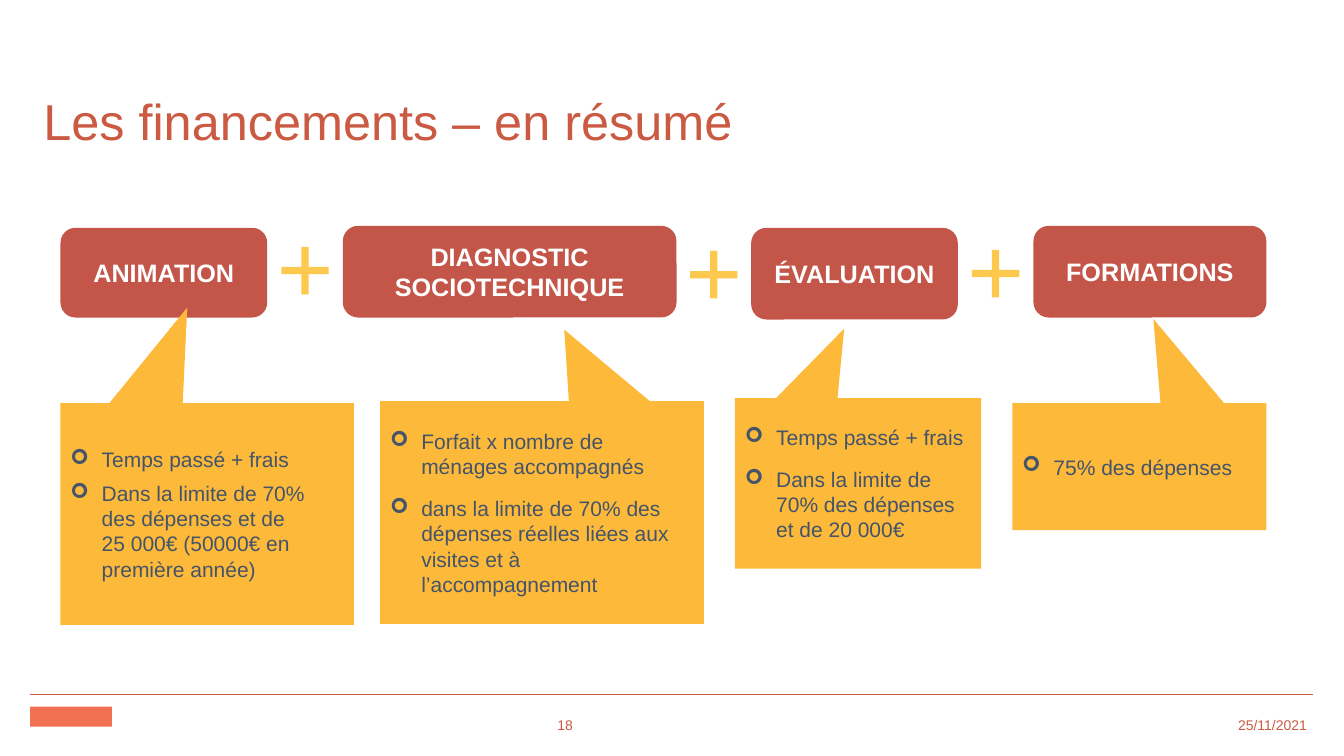
from lxml.etree import SubElement
from pptx import Presentation
from pptx.dml.color import RGBColor
from pptx.enum.shapes import MSO_CONNECTOR, MSO_SHAPE
from pptx.enum.text import MSO_ANCHOR, MSO_AUTO_SIZE, PP_ALIGN
from pptx.oxml.ns import qn
from pptx.util import Inches, Pt

TITLE = "Les financements – en résumé"
RED, BRICK, GOLD, AMBER = "CB5A43", "C35549", "FCC84D", "FDB939"
SLATE, WHITE, CORAL = "44546A", "FFFFFF", "F27153"

HEADS = [
    ("ANIMATION", (0.6, 2.26, 2.05, 0.89)),
    ("DIAGNOSTIC SOCIOTECHNIQUE", (3.4, 2.24, 3.31, 0.91)),
    ("ÉVALUATION", (7.45, 2.26, 2.05, 0.91)),
    ("FORMATIONS", (10.25, 2.24, 2.31, 0.91)),
]
PLUS_TOPS = [2.45, 2.49, 2.48]
PLUS_SIZE = 0.47
NOTES = [
    ((0.6, 4, 2.91, 2.2), (-0.068, -0.931), 6,
     ["Temps passé + frais",
      "Dans la limite de 70% des dépenses et de\n25 000€ (50000€ en première année)"]),
    ((3.77, 3.98, 3.21, 2.21), (0.069, -0.821), 12,
     ["Forfait x nombre de ménages accompagnés",
      "dans la limite de 70% des dépenses réelles liées aux visites et à l’accompagnement"]),
    ((7.29, 3.95, 2.44, 1.69), (-0.056, -0.908), 12,
     ["Temps passé + frais", "Dans la limite de 70% des dépenses et de 20 000€"]),
    ((10.04, 4, 2.52, 1.26), (0.055, -1.164), 12, ["75% des dépenses"]),
]
FOOTER = [
    ("25/11/2021", (10.06, 6.99, 3, 0.4), PP_ALIGN.RIGHT),
    ("18", (5.43, 6.99, 0.89, 0.4), PP_ALIGN.LEFT),
]


def color(code):
    return RGBColor.from_string(code)


def add_text(para, text, size, code, bold=False, align=PP_ALIGN.LEFT):
    para.alignment = align
    for i, line in enumerate(text.split("\n")):
        if i:
            para.add_line_break()
        run = para.add_run()
        run.text = line
        run.font.name = "Arial"
        run.font.size = Pt(size)
        run.font.bold = bold
        run.font.color.rgb = color(code)


def add_bullet(para):
    props = para._p.get_or_add_pPr()
    props.set("marL", str(Inches(0.31)))
    props.set("indent", str(-Inches(0.31)))
    SubElement(props, qn("a:buFont"), typeface="Wingdings")
    SubElement(props, qn("a:buChar"), char="➢")


def set_frame(shape, anchor=MSO_ANCHOR.MIDDLE):
    frame = shape.text_frame
    frame.word_wrap = True
    frame.auto_size = MSO_AUTO_SIZE.NONE
    frame.vertical_anchor = anchor
    return frame


def add_block(kind, box, fill, adjusts=()):
    shape = slide.shapes.add_shape(kind, *map(Inches, box))
    shape.shadow.inherit = False
    shape.fill.solid()
    shape.fill.fore_color.rgb = color(fill)
    shape.line.fill.background()
    for i, value in enumerate(adjusts):
        shape.adjustments[i] = value
    return shape


deck = Presentation()
deck.slide_width, deck.slide_height = Inches(13.33), Inches(7.5)
slide = deck.slides.add_slide(deck.slide_layouts[5])

title = slide.shapes.title
title.left, title.top = Inches(0.33), Inches(0.21)
title.width, title.height = Inches(8.1), Inches(1.33)
add_text(set_frame(title, MSO_ANCHOR.BOTTOM).paragraphs[0], TITLE, 36, RED)

rule = slide.shapes.add_connector(
    MSO_CONNECTOR.STRAIGHT, Inches(0.3), Inches(6.89), Inches(13.02), Inches(6.89))
rule.line.color.rgb = color(RED)
rule.line.width = Pt(1)
SubElement(rule._element.spPr, qn("a:effectLst"))
add_block(MSO_SHAPE.RECTANGLE, (0.3, 7.01, 0.81, 0.2), CORAL)

for text, box, align in FOOTER:
    field = slide.shapes.add_textbox(*map(Inches, box))
    add_text(set_frame(field).paragraphs[0], text, 10, RED, align=align)

for text, box in HEADS:
    head = add_block(MSO_SHAPE.ROUNDED_RECTANGLE, box, BRICK)
    add_text(set_frame(head).paragraphs[0], text, 18, WHITE, True, PP_ALIGN.CENTER)

for (_, box), (_, after), top in zip(HEADS, HEADS[1:], PLUS_TOPS):
    left = (box[0] + box[2] + after[0] - PLUS_SIZE) / 2
    add_block(MSO_SHAPE.CROSS, (left, top, PLUS_SIZE, PLUS_SIZE), GOLD, [0.423])

for box, tip, gap, items in NOTES:
    frame = set_frame(add_block(MSO_SHAPE.RECTANGULAR_CALLOUT, box, AMBER, tip))
    for i, item in enumerate(items):
        para = frame.add_paragraph() if i else frame.paragraphs[0]
        add_bullet(para)
        para.space_after = Pt(gap)
        add_text(para, item, 15, SLATE)

deck.save("out.pptx")
